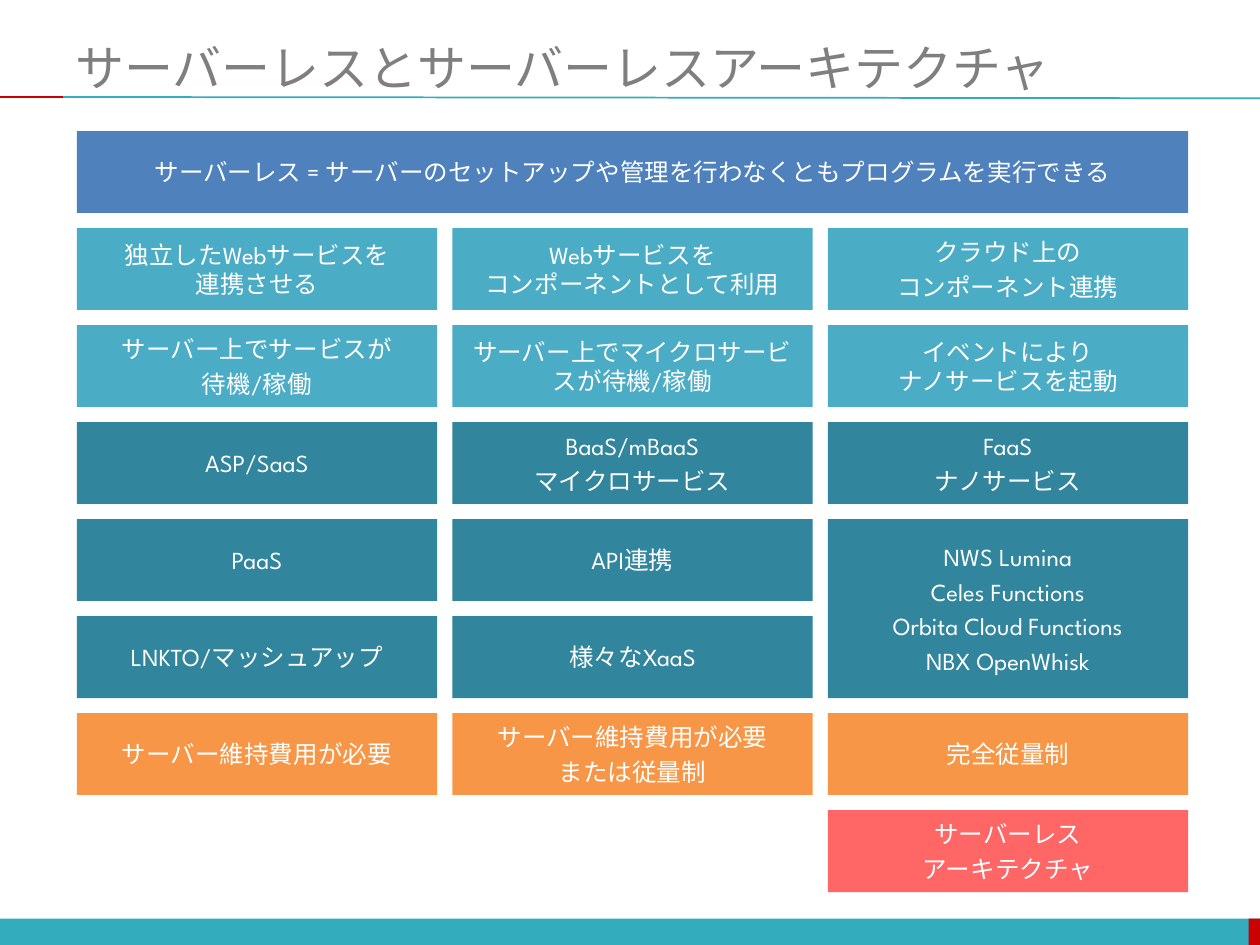
from dataclasses import dataclass

import pptx
import pptx.dml.color
import pptx.enum.shapes
import pptx.enum.text
import pptx.oxml.ns
import pptx.util
from lxml import etree
from pptx.util import Inches, Pt

FONT = "League Spartan"
TEAL, RED, GRAY, WHITE = "33ACBD", "CC0000", "7F7F7F", "FFFFFF"
DEFINITION, CONCEPT, SERVICE, COST, CONCLUSION = (
    "4F81BD", "4BACC6", "31859C", "F79646", "FF6666")
GRID_LEFT, GRID_TOP = 0.61, 1.04
COLUMN_PITCH, ROW_PITCH = 2.98, 0.77
CELL_WIDTH, CELL_HEIGHT = 2.86, 0.65


@dataclass
class Cell:
    row: int
    column: int
    color: str
    paragraphs: list[str]
    row_span: int = 1
    column_span: int = 1


@dataclass
class Rule:
    start: tuple[float, float]
    end: tuple[float, float]
    color: str


CELLS = [
    Cell(0, 0, DEFINITION,
         ["サーバーレス = サーバーのセットアップや管理を行わなくともプログラムを実行できる"],
         column_span=3),
    Cell(1, 0, CONCEPT, ["独立したWebサービスを\v連携させる"]),
    Cell(1, 1, CONCEPT, ["Webサービスを\vコンポーネントとして利用"]),
    Cell(1, 2, CONCEPT, ["クラウド上の", "コンポーネント連携"]),
    Cell(2, 0, CONCEPT, ["サーバー上でサービスが", "待機/稼働"]),
    Cell(2, 1, CONCEPT, ["サーバー上でマイクロサービスが待機/稼働"]),
    Cell(2, 2, CONCEPT, ["イベントにより\vナノサービスを起動"]),
    Cell(3, 0, SERVICE, ["ASP/SaaS"]),
    Cell(3, 1, SERVICE, ["BaaS/mBaaS", "マイクロサービス"]),
    Cell(3, 2, SERVICE, ["FaaS", "ナノサービス"]),
    Cell(4, 0, SERVICE, ["PaaS"]),
    Cell(4, 1, SERVICE, ["API連携"]),
    Cell(4, 2, SERVICE,
         ["NWS Lumina", "Celes Functions", "Orbita Cloud Functions", "NBX OpenWhisk"],
         row_span=2),
    Cell(5, 0, SERVICE, ["LNKTO/マッシュアップ"]),
    Cell(5, 1, SERVICE, ["様々なXaaS"]),
    Cell(6, 0, COST, ["サーバー維持費用が必要"]),
    Cell(6, 1, COST, ["サーバー維持費用が必要", "または従量制"]),
    Cell(6, 2, COST, ["完全従量制"]),
    Cell(7, 2, CONCLUSION, ["サーバーレス", "アーキテクチャ"]),
]

RULES = [
    Rule((0.5, 0.77), (10, 0.78), TEAL),
    Rule((0, 0.77), (0.5, 0.77), RED),
]


def rgb(color: str) -> pptx.dml.color.RGBColor:
    return pptx.dml.color.RGBColor.from_string(color)


def style_font(font, size: float, color: str) -> None:
    font.name = FONT
    font.size = Pt(size)
    font.color.rgb = rgb(color)


def draw_block(slide, left: float, top: float, width: float, height: float, color: str):
    block = slide.shapes.add_shape(
        pptx.enum.shapes.MSO_SHAPE.RECTANGLE,
        Inches(left), Inches(top), Inches(width), Inches(height))
    block.shadow.inherit = False
    block.fill.solid()
    block.fill.fore_color.rgb = rgb(color)
    block.line.fill.background()
    return block


def draw_cell(slide, cell: Cell) -> None:
    block = draw_block(
        slide,
        GRID_LEFT + cell.column * COLUMN_PITCH,
        GRID_TOP + cell.row * ROW_PITCH,
        CELL_WIDTH + (cell.column_span - 1) * COLUMN_PITCH,
        CELL_HEIGHT + (cell.row_span - 1) * ROW_PITCH,
        cell.color)
    frame = block.text_frame
    frame.word_wrap = True
    frame.vertical_anchor = pptx.enum.text.MSO_ANCHOR.MIDDLE
    for index, wording in enumerate(cell.paragraphs):
        paragraph = frame.add_paragraph() if index else frame.paragraphs[0]
        paragraph.text = wording
        paragraph.alignment = pptx.enum.text.PP_ALIGN.CENTER
        paragraph.space_before = Pt(3 if index else 0)
        style_font(paragraph.font, 14, WHITE)


def draw_rule(slide, rule: Rule) -> None:
    connector = slide.shapes.add_connector(
        pptx.enum.shapes.MSO_CONNECTOR.STRAIGHT,
        *map(Inches, rule.start + rule.end))
    connector.line.color.rgb = rgb(rule.color)
    connector.line.width = Pt(1)
    etree.SubElement(connector._element.spPr, pptx.oxml.ns.qn("a:effectLst"))


def set_title(slide, wording: str) -> None:
    title = slide.shapes.title
    title.left, title.top = Inches(0.5), Inches(0.3)
    title.width, title.height = Inches(9.5), Inches(0.46)
    frame = title.text_frame
    frame.text = wording
    frame.word_wrap = True
    frame.auto_size = pptx.enum.text.MSO_AUTO_SIZE.NONE
    frame.vertical_anchor = pptx.enum.text.MSO_ANCHOR.MIDDLE
    heading = frame.paragraphs[0]
    heading.alignment = pptx.enum.text.PP_ALIGN.LEFT
    style_font(heading.font, 28, GRAY)


def main() -> None:
    presentation = pptx.Presentation()
    presentation.slide_width = Inches(10)
    presentation.slide_height = Inches(7.5)
    slide = presentation.slides.add_slide(presentation.slide_layouts[5])
    draw_block(slide, 0, 7.29, 10, 0.22, TEAL)
    draw_block(slide, 9.91, 7.29, 0.1, 0.22, RED)
    for rule in RULES:
        draw_rule(slide, rule)
    set_title(slide, "サーバーレスとサーバーレスアーキテクチャ")
    for cell in CELLS:
        draw_cell(slide, cell)
    presentation.save("out.pptx")


if __name__ == "__main__":
    main()
